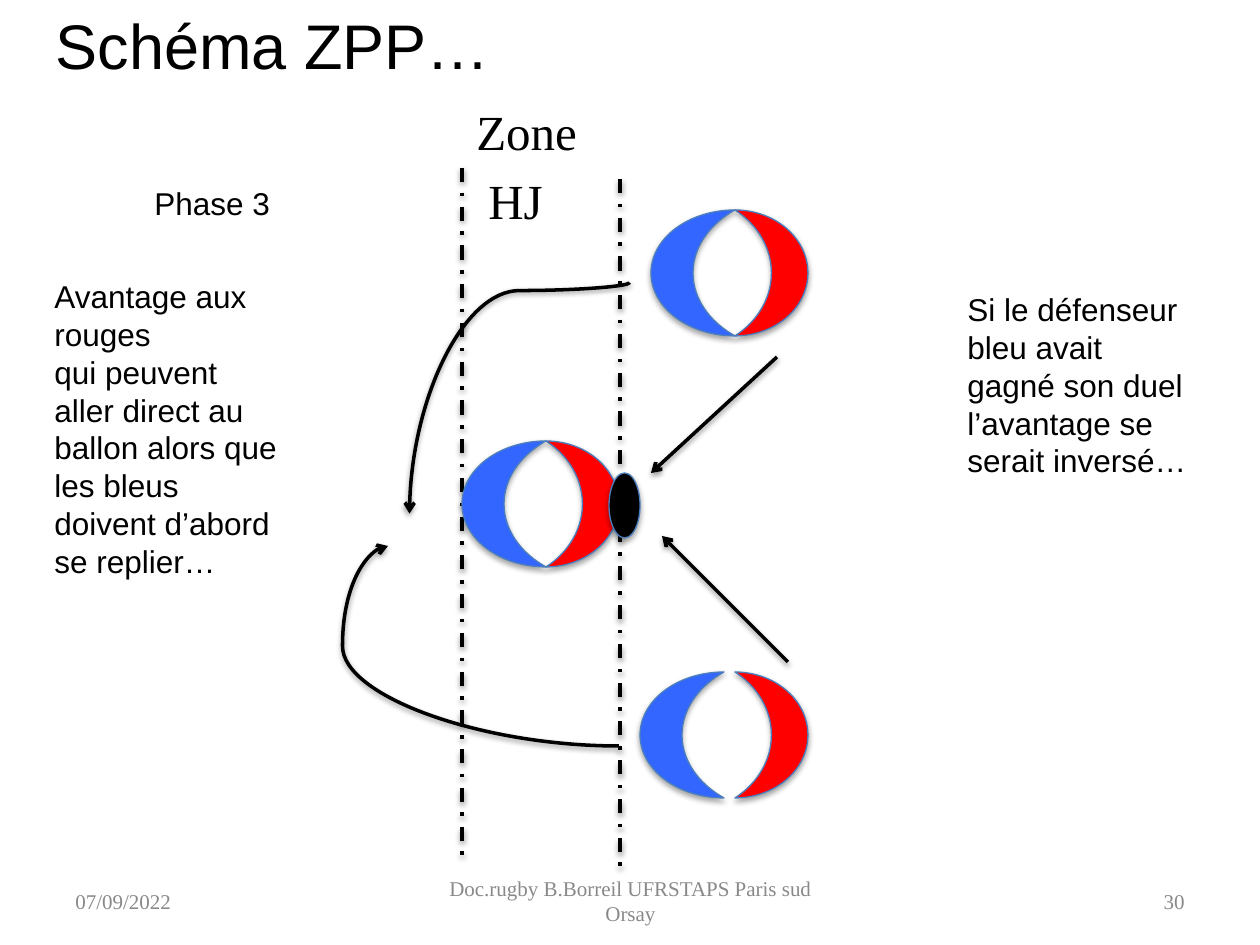
from lxml import etree
from pptx import Presentation
from pptx.dml.color import RGBColor
from pptx.enum.dml import MSO_LINE
from pptx.enum.shapes import MSO_CONNECTOR, MSO_SHAPE
from pptx.enum.text import MSO_ANCHOR, PP_ALIGN
from pptx.oxml.ns import qn
from pptx.util import Pt

PX = 914400 / 126
LEFT, CENTER, RIGHT = PP_ALIGN.LEFT, PP_ALIGN.CENTER, PP_ALIGN.RIGHT
TOP, MIDDLE = MSO_ANCHOR.TOP, MSO_ANCHOR.MIDDLE
STRAIGHT, CURVE = MSO_CONNECTOR.STRAIGHT, MSO_CONNECTOR.CURVE
MOON, OVAL = MSO_SHAPE.MOON, MSO_SHAPE.OVAL
SANS, SERIF = "Arial", "Times New Roman"
COLORS = {"black": "000000", "grey": "898989", "red": "FF0000",
          "blue": "3366FF", "outline": "4B7EBC"}

# paragraphs, box, font, size, colour, alignment, anchor
TEXTS = [
    (["Schéma ZPP…"], (0, 0, 546, 158), SANS, 36, "black", CENTER, TOP),
    (["07/09/2022"], (63, 876, 294, 50), SERIF, 12, "grey", LEFT, MIDDLE),
    (["Doc.rugby B.Borreil UFRSTAPS Paris sud Orsay"],
     (431, 876, 399, 50), SERIF, 12, "grey", CENTER, MIDDLE),
    (["30"], (903, 876, 294, 50), SERIF, 12, "grey", RIGHT, MIDDLE),
    (["Avantage aux rouges", "qui peuvent",
      "aller direct au ballon alors que les bleus doivent d’abord se replier…"],
     (42, 271, 252, 522), SANS, 18, "black", LEFT, TOP),
    (["Phase 3"], (142, 178, 156, 63), SANS, 18, "black", LEFT, TOP),
    (["Si le défenseur bleu avait gagné son duel l’avantage se serait inversé…"],
     (955, 284, 252, 420), SANS, 18, "black", LEFT, TOP),
]
ZONE_LABEL = ["Zone", "HJ"]
ZONE_BOX = (378, 95, 242, 158)
ZONE_INDENTS = [86, 98]

# left of blue player, left of red player, top
DUELS = [(651, 735, 210), (640, 735, 672), (462, 546, 441)]
BLUE_WIDTH, RED_WIDTH, PLAYER_HEIGHT = 84, 73, 126
BALL = (609, 473, 31, 65)

OFFSIDE_LINES = [(462, 168, 462, 861), (620, 179, 620, 871)]
RED_RUNS = [(777, 357, 651, 473), (788, 662, 662, 536)]
# box before rotation, rotation in degrees, bend in 1/1000 %
BLUE_RETREATS = [((404, 288, 231, 220), 90, 3500),
                 ((388, 546, 231, 200), 180, 119700)]


def px(*lengths):
    return [round(length * PX) for length in lengths]


def rgb(name):
    return RGBColor.from_string(COLORS[name])


def add_shadow(part, distance, opacity):
    effects = etree.SubElement(part._element.spPr, qn("a:effectLst"))
    shadow = etree.SubElement(effects, qn("a:outerShdw"), blurRad="40000",
                              dist=str(distance), dir="5400000", rotWithShape="0")
    color = etree.SubElement(shadow, qn("a:srgbClr"), val=COLORS["black"])
    etree.SubElement(color, qn("a:alpha"), val=str(opacity * 1000))


def add_text(slide, paragraphs, box, font, size, color, align, anchor):
    frame = slide.shapes.add_textbox(*px(*box)).text_frame
    frame.word_wrap = True
    frame.vertical_anchor = anchor
    frame.text = "\n".join(paragraphs)
    for paragraph in frame.paragraphs:
        paragraph.alignment = align
        paragraph.font.name = font
        paragraph.font.size = Pt(size)
        paragraph.font.color.rgb = rgb(color)
    return frame


def add_figure(slide, kind, box, color, mirrored=False):
    figure = slide.shapes.add_shape(kind, *px(*box))
    figure.fill.solid()
    figure.fill.fore_color.rgb = rgb(color)
    figure.line.color.rgb = rgb("outline")
    figure.line.width = Pt(0.75)
    if mirrored:
        figure._element.spPr.xfrm.set("flipH", "1")
    add_shadow(figure, 23000, 35)


def add_line(slide, ends, kind=STRAIGHT, dashed=False):
    line = slide.shapes.add_connector(kind, *px(*ends))
    line.line.color.rgb = rgb("black")
    line.line.width = Pt(2)
    if dashed:
        line.line.dash_style = MSO_LINE.DASH_DOT
    else:
        etree.SubElement(line.line._get_or_add_ln(), qn("a:tailEnd"), type="arrow")
    add_shadow(line, 20000, 38)
    return line


def add_retreat(slide, box, degrees, bend):
    left, top, width, height = box
    curve = add_line(slide, (left, top, left + width, top + height), CURVE)
    properties = curve._element.spPr
    properties.xfrm.set("rot", str(degrees * 60000))
    guides = properties.find(qn("a:prstGeom")).find(qn("a:avLst"))
    etree.SubElement(guides, qn("a:gd"), name="adj1", fmla=f"val {bend}")


def main():
    deck = Presentation()
    deck.slide_width, deck.slide_height = px(1260, 945)
    slide = deck.slides.add_slide(deck.slide_layouts[6])

    for ends in OFFSIDE_LINES:
        add_line(slide, ends, dashed=True)
    for blue_left, red_left, top in DUELS:
        add_figure(slide, MOON, (red_left, top, RED_WIDTH, PLAYER_HEIGHT), "red", True)
        add_figure(slide, MOON, (blue_left, top, BLUE_WIDTH, PLAYER_HEIGHT), "blue")
    add_figure(slide, OVAL, BALL, "black")
    for ends in RED_RUNS:
        add_line(slide, ends)
    for retreat in BLUE_RETREATS:
        add_retreat(slide, *retreat)

    for text in TEXTS:
        add_text(slide, *text)
    zone = add_text(slide, ZONE_LABEL, ZONE_BOX, SERIF, 28, "black", LEFT, TOP)
    for paragraph, indent in zip(zone.paragraphs, ZONE_INDENTS):
        paragraph._p.get_or_add_pPr().set("marL", str(px(indent)[0]))
    zone.paragraphs[1].space_before = Pt(6)

    deck.save("out.pptx")


if __name__ == "__main__":
    main()
